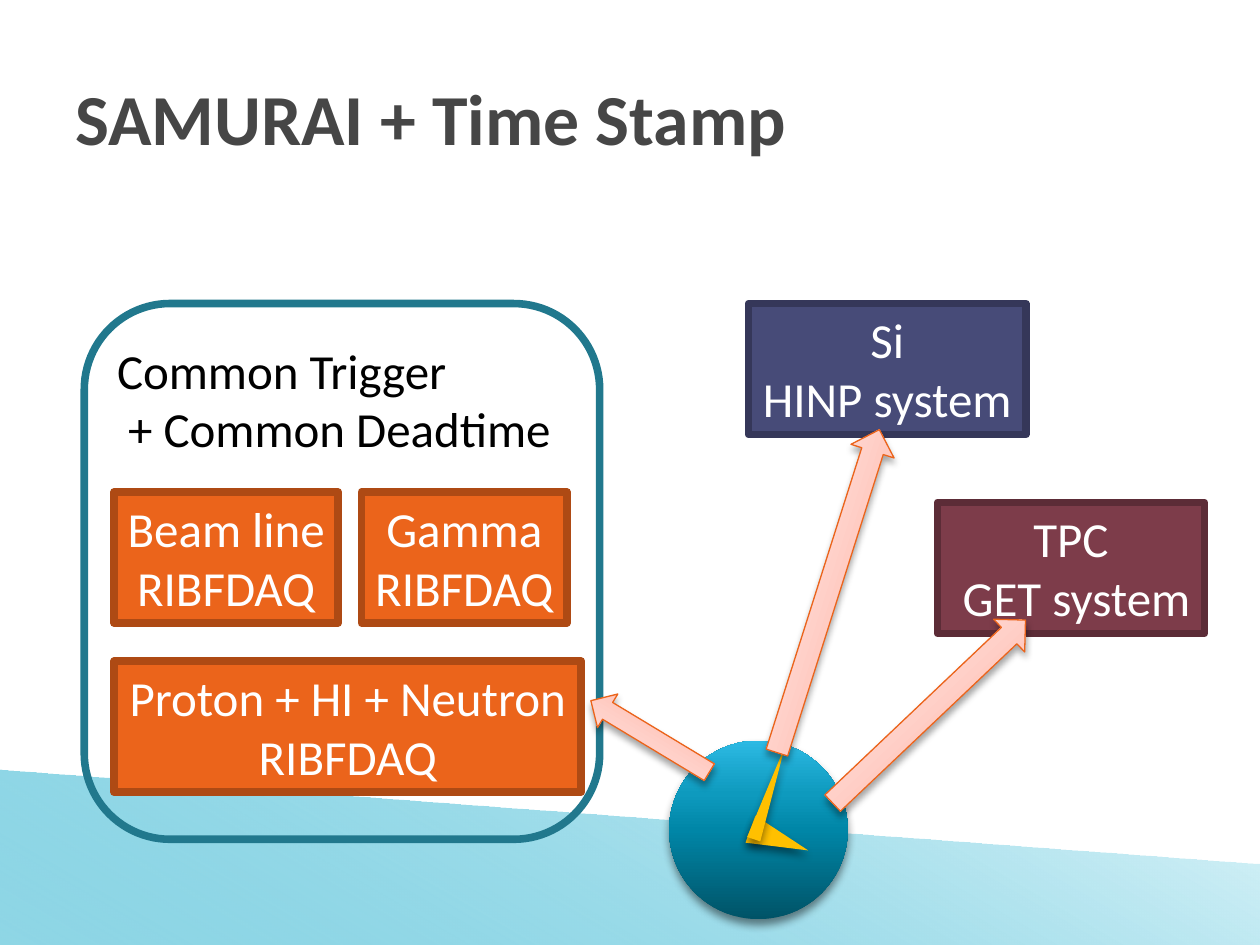
import lxml.etree
import pptx
import pptx.dml.color
import pptx.enum.shapes
import pptx.enum.text
import pptx.oxml.ns
import pptx.util
from pptx.util import Cm

SHAPE = pptx.enum.shapes.MSO_SHAPE
ANCHOR = pptx.enum.text.MSO_ANCHOR
ALIGN = pptx.enum.text.PP_ALIGN

# Gradient stops: position, colour, opacity (all in percent)
WAVE_STOPS = [(0, "DEF5FA", 100), (100, "1FAECD", 50)]
CLOCK_STOPS = [(0, "005367", 100), (50, "0086A7", 100),
               (70, "0E9ABE", 100), (100, "2CB9E3", 100)]
ARROW_STOPS = [(0, "FFAC9C", 100), (65, "FFD8D2", 100), (100, "FFE4DF", 100)]
ORANGE = ("EB641B", "AE4A14")
BLUE = ("474B78", "353759")
RED = ("7D3C4A", "5C2C37")
BORDER = 4.33


def color(value):
    return pptx.dml.color.RGBColor.from_string(value)


def add_element(parent, tag, **attributes):
    element = lxml.etree.SubElement(parent, pptx.oxml.ns.qn(tag))
    for name, value in attributes.items():
        element.set(name, str(value))
    return element


def add_color(parent, value, opacity):
    element = add_element(parent, "a:srgbClr", val=value)
    if opacity < 100:
        add_element(element, "a:alpha", val=opacity * 1000)


def set_gradient(shape, stops, angle):
    shape.fill.background()
    properties = shape._element.spPr
    gradient = add_element(properties, "a:gradFill", rotWithShape=1)
    stop_list = add_element(gradient, "a:gsLst")
    for position, value, opacity in stops:
        add_color(add_element(stop_list, "a:gs", pos=position * 1000), value, opacity)
    add_element(gradient, "a:lin", ang=angle * 60000, scaled=0)
    properties.replace(properties.find(pptx.oxml.ns.qn("a:noFill")), gradient)


def set_shadow(shape, opacity, blur, distance):
    """Drop a black shadow straight down; blur and distance are in points."""
    effects = shape._element.spPr.find(pptx.oxml.ns.qn("a:effectLst"))
    shadow = add_element(effects, "a:outerShdw", blurRad=pptx.util.Pt(blur),
                         dist=pptx.util.Pt(distance), dir=90 * 60000, rotWithShape=0)
    add_color(shadow, "000000", opacity)


def format_shape(shape, fill=None, line=None, line_width=BORDER):
    shape.shadow.inherit = False
    if fill:
        shape.fill.solid()
        shape.fill.fore_color.rgb = color(fill)
    else:
        shape.fill.background()
    if line:
        shape.line.color.rgb = color(line)
        shape.line.width = pptx.util.Pt(line_width)
    else:
        shape.line.fill.background()


def add_shape(shapes, kind, left, top, width, height, rotation=0, **style):
    shape = shapes.add_shape(kind, Cm(left), Cm(top), Cm(width), Cm(height))
    shape.rotation = rotation
    format_shape(shape, **style)
    return shape


def write_text(shape, text, size=28, value="000000", bold=False,
               align=ALIGN.LEFT, anchor=ANCHOR.TOP, wrap=False):
    frame = shape.text_frame
    frame.text = text
    frame.word_wrap = wrap
    frame.vertical_anchor = anchor
    if not wrap:
        frame.auto_size = pptx.enum.text.MSO_AUTO_SIZE.SHAPE_TO_FIT_TEXT
    for paragraph in frame.paragraphs:
        paragraph.alignment = align
        font = paragraph.font
        font.name = "Calibri"
        font.size = pptx.util.Pt(size)
        font.bold = bold
        font.color.rgb = color(value)


def add_label(slide, text, left, top, width, height, **text_format):
    box = slide.shapes.add_textbox(Cm(left), Cm(top), Cm(width), Cm(height))
    write_text(box, text, **text_format)


def add_system(slide, text, left, top, width, colors):
    fill, line = colors
    box = add_shape(slide.shapes, SHAPE.RECTANGLE, left, top, width, 2.64,
                    fill=fill, line=line)
    write_text(box, text, value="FFFFFF", align=ALIGN.CENTER)


def add_wave(slide):
    builder = slide.shapes.build_freeform(Cm(0), Cm(15.52))
    builder.add_line_segments([(Cm(25.4), Cm(17.42)), (Cm(25.4), Cm(19.05)),
                               (Cm(0), Cm(19.05))], close=True)
    wave = builder.convert_to_shape()
    format_shape(wave)
    set_gradient(wave, WAVE_STOPS, 120)


def add_clock(slide):
    clock = slide.shapes.add_group_shape().shapes
    face = add_shape(clock, SHAPE.OVAL, 13.49, 14.93, 3.6, 3.6)
    set_gradient(face, CLOCK_STOPS, 270)
    hour = add_shape(clock, SHAPE.ISOSCELES_TRIANGLE, 15.42, 16.31, 0.58, 1.24,
                     rotation=110.2, fill="FFC000")
    minute = add_shape(clock, SHAPE.ISOSCELES_TRIANGLE, 15.37, 14.99, 0.28, 1.98,
                       rotation=18.6, fill="FFC000")
    for part in (face, hour, minute):
        set_shadow(part, 45, 5, 3)


def add_arrow(slide, left, top, width, height, rotation):
    arrow = add_shape(slide.shapes, SHAPE.RIGHT_ARROW, left, top, width, height,
                      rotation=rotation, line="EB641B", line_width=0.75)
    set_gradient(arrow, ARROW_STOPS, 270)
    set_shadow(arrow, 35, 4, 3)


def main():
    presentation = pptx.Presentation()
    presentation.slide_width = Cm(25.4)
    presentation.slide_height = Cm(19.05)
    slide = presentation.slides.add_slide(presentation.slide_layouts[6])

    add_wave(slide)
    add_label(slide, "SAMURAI + Time Stamp", 1.27, 0.76, 22.86, 3.18, size=41,
              value="464646", bold=True, anchor=ANCHOR.MIDDLE, wrap=True)

    add_system(slide, "Beam line\nRIBFDAQ", 2.3, 9.92, 4.52, ORANGE)
    add_system(slide, "Si\nHINP system", 15.09, 6.12, 5.59, BLUE)
    add_system(slide, "TPC\n GET system", 18.9, 10.13, 5.38, RED)
    add_system(slide, "Gamma\nRIBFDAQ", 7.29, 9.92, 4.14, ORANGE)
    add_system(slide, "Proton + HI + Neutron\nRIBFDAQ", 2.3, 13.33, 9.42, ORANGE)

    add_shape(slide.shapes, SHAPE.ROUNDED_RECTANGLE, 1.7, 6.12, 10.39, 10.8,
              line="21788D")
    add_label(slide, "Common Trigger\n + Common Deadtime", 2.11, 6.73, 9.35, 2.64)

    add_clock(slide)
    add_arrow(slide, 13.28, 11.46, 6.83, 0.91, 287.6)
    add_arrow(slide, 11.71, 14.45, 2.79, 0.79, 211.1)
    add_arrow(slide, 16.05, 13.89, 5.36, 0.91, 316.5)

    presentation.save("out.pptx")


if __name__ == "__main__":
    main()
